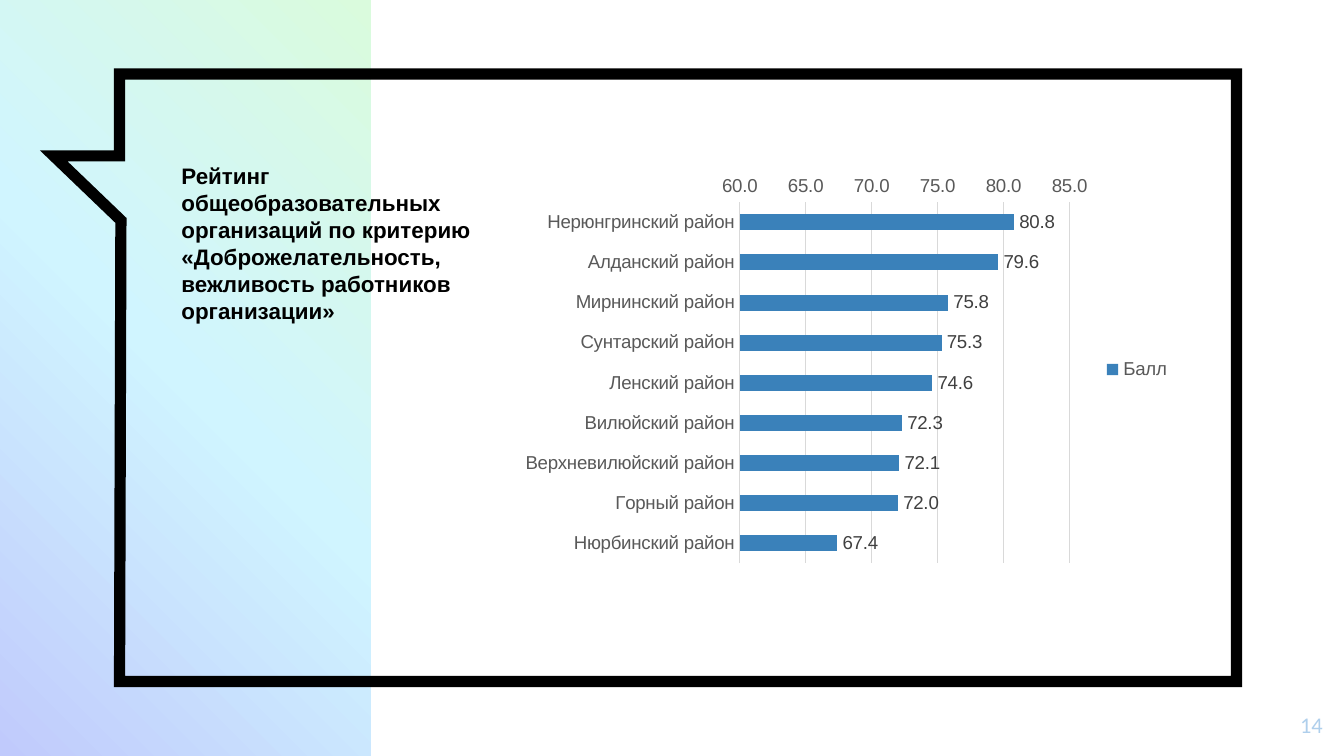
from copy import deepcopy

from lxml import etree
from pptx import Presentation
from pptx.chart.data import CategoryChartData
from pptx.dml.color import RGBColor
from pptx.enum.chart import XL_CHART_TYPE, XL_LABEL_POSITION, XL_LEGEND_POSITION, XL_TICK_MARK
from pptx.enum.shapes import MSO_SHAPE
from pptx.enum.text import MSO_ANCHOR, MSO_AUTO_SIZE, PP_ALIGN
from pptx.oxml.ns import qn
from pptx.util import Inches, Pt

BAR_CLUSTERED = XL_CHART_TYPE.BAR_CLUSTERED
OUTSIDE_END = XL_LABEL_POSITION.OUTSIDE_END
LEGEND_RIGHT = XL_LEGEND_POSITION.RIGHT
NO_TICK = XL_TICK_MARK.NONE
RECTANGLE = MSO_SHAPE.RECTANGLE
TOP = MSO_ANCHOR.TOP
FIT_SHAPE = MSO_AUTO_SIZE.SHAPE_TO_FIT_TEXT
LEFT, RIGHT = PP_ALIGN.LEFT, PP_ALIGN.RIGHT

BLACK = RGBColor(0x00, 0x00, 0x00)
PALE_BLUE = RGBColor(0xAF, 0xCF, 0xEC)
BAR_BLUE = RGBColor(0x3A, 0x81, 0xBA)
AXIS_GREY = RGBColor(0x59, 0x59, 0x59)
LABEL_GREY = RGBColor(0x40, 0x40, 0x40)
GRID_GREY = RGBColor(0xD9, 0xD9, 0xD9)
LAVENDER = RGBColor(0xC0, 0xCA, 0xFC)
ICE = RGBColor(0xD0, 0xF5, 0xFF)
MINT = RGBColor(0xDA, 0xFB, 0xDD)

WIDTH = 10
HEIGHT = WIDTH * 9 / 16
HEADING = ("Рейтинг общеобразовательных организаций по критерию "
           "«Доброжелательность, вежливость работников организации»")
PAGE = "14"
SERIES = "Балл"
SCORES = {
    "Нерюнгринский район": 80.8,
    "Алданский район": 79.6,
    "Мирнинский район": 75.8,
    "Сунтарский район": 75.3,
    "Ленский район": 74.6,
    "Вилюйский район": 72.3,
    "Верхневилюйский район": 72.1,
    "Горный район": 72.0,
    "Нюрбинский район": 67.4,
}
BUBBLE = [(0.89, 0.55), (9.2, 0.55), (9.2, 5.07), (0.89, 5.07),
          (0.9, 1.64), (0.4, 1.16), (0.89, 1.16)]
PANEL_BOX = (0, 0, 2.76, HEIGHT)
HEADING_BOX = (1.25, 1.16, 2.76, 1.31)
CHART_BOX = (3.81, 1.25, 5, 3)
PAGE_BOX = (9.34, 5.19, 0.6, 0.43)


def inches(box):
    return [Inches(length) for length in box]


def style_font(font, color, size=10, name="Arial", bold=False):
    font.name, font.size, font.bold = name, Pt(size), bold
    font.color.rgb = color


def write(frame, text, align=LEFT, inset=0.05, **font_format):
    frame.word_wrap = True
    frame.vertical_anchor = TOP
    frame.margin_left = frame.margin_right = Inches(0.1)
    frame.margin_top = frame.margin_bottom = Inches(inset)
    paragraph = frame.paragraphs[0]
    paragraph.alignment = align
    run = paragraph.add_run()
    run.text = text
    style_font(run.font, **font_format)


def add_panel(slide):
    panel = slide.shapes.add_shape(RECTANGLE, *inches(PANEL_BOX))
    panel.shadow.inherit = False
    panel.line.fill.background()
    panel.fill.gradient()
    panel.fill.gradient_angle = 45
    first = panel.fill._fill._gradFill.find(qn("a:gsLst"))[0]
    first.addnext(deepcopy(first))
    for stop, color, position in zip(panel.fill.gradient_stops, (LAVENDER, ICE, MINT), (0, 0.5, 1)):
        stop.color.rgb = color
        stop.position = position


def add_bubble(slide):
    points = [inches(point) for point in BUBBLE]
    builder = slide.shapes.build_freeform(*points[0])
    builder.add_line_segments(points[1:], close=True)
    bubble = builder.convert_to_shape()
    bubble.shadow.inherit = False
    bubble.fill.background()
    bubble.line.color.rgb = BLACK
    bubble.line.width = Pt(6)
    etree.SubElement(bubble.line._ln, qn("a:miter"), lim="800000")


def add_score_chart(slide):
    data = CategoryChartData(number_format="0.0")
    data.categories = list(SCORES)
    data.add_series(SERIES, list(SCORES.values()))
    chart = slide.shapes.add_chart(BAR_CLUSTERED, *inches(CHART_BOX), data).chart
    style_font(chart.font, BLACK)
    chart.has_title = False
    chart.has_legend = True
    chart.legend.position = LEGEND_RIGHT
    chart.legend.include_in_layout = False
    style_font(chart.legend.font, AXIS_GREY)

    districts, scores = chart.category_axis, chart.value_axis
    for axis in (districts, scores):
        axis.major_tick_mark = axis.minor_tick_mark = NO_TICK
        style_font(axis.tick_labels.font, AXIS_GREY)
    districts.reverse_order = True
    scores.has_major_gridlines = True
    for line in (districts.format.line, scores.major_gridlines.format.line):
        line.color.rgb = GRID_GREY
        line.width = Pt(0.75)
    scores.format.line.fill.background()
    scores.minimum_scale, scores.maximum_scale, scores.major_unit = 60, 85, 5
    scores.tick_labels.number_format = "0.0"
    scores.tick_labels.number_format_is_linked = False

    plot = chart.plots[0]
    plot.gap_width = 150
    plot.vary_by_categories = False
    bars = plot.series[0]
    bars.format.fill.solid()
    bars.format.fill.fore_color.rgb = BAR_BLUE
    labels = bars.data_labels
    labels.show_value = True
    labels.position = OUTSIDE_END
    labels.number_format = "0.0"
    labels.number_format_is_linked = False
    style_font(labels.font, LABEL_GREY)


def main():
    deck = Presentation()
    deck.slide_width, deck.slide_height = inches((WIDTH, HEIGHT))
    slide = deck.slides.add_slide(deck.slide_layouts[5])
    add_panel(slide)
    add_bubble(slide)

    page = slide.shapes.add_textbox(*inches(PAGE_BOX))
    write(page.text_frame, PAGE, align=RIGHT, inset=0.1, color=PALE_BLUE, size=12, name="Calibri")

    heading = slide.shapes.title
    heading.left, heading.top, heading.width, heading.height = inches(HEADING_BOX)
    write(heading.text_frame, HEADING, color=BLACK, size=12, bold=True)
    heading.text_frame.auto_size = FIT_SHAPE
    page._element.addnext(heading._element)

    add_score_chart(slide)
    deck.save("out.pptx")


if __name__ == "__main__":
    main()
